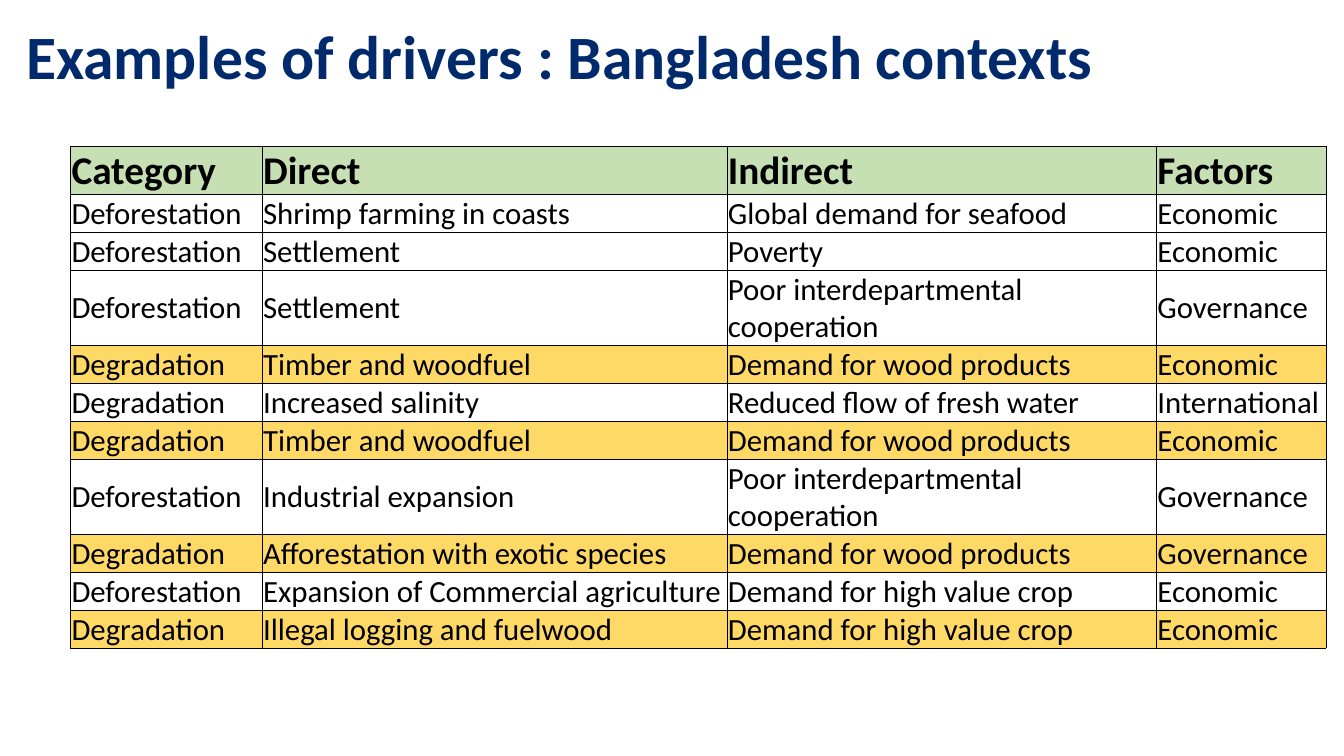
from dataclasses import dataclass

from lxml.etree import SubElement
from pptx import Presentation
from pptx.dml.color import RGBColor
from pptx.enum.text import MSO_ANCHOR
from pptx.oxml.ns import qn
from pptx.util import Inches, Pt


@dataclass(frozen=True)
class Theme:
    font: str = "Calibri"
    navy: str = "002A6C"
    black: str = "000000"
    green: str = "C6E0B4"
    gold: str = "FFD966"
    title: int = 44
    head: int = 28
    body: int = 22
    rule: float = 0.5


THEME = Theme()
TITLE = "Examples of drivers : Bangladesh contexts"
HEADS = ("Category", "Direct", "Indirect", "Factors")
DRIVERS = (
    ("Deforestation", "Shrimp farming in coasts", "Global demand for seafood", "Economic"),
    ("Deforestation", "Settlement", "Poverty", "Economic"),
    ("Deforestation", "Settlement", "Poor interdepartmental cooperation", "Governance"),
    ("Degradation", "Timber and woodfuel", "Demand for wood products", "Economic"),
    ("Degradation", "Increased salinity", "Reduced flow of fresh water", "International"),
    ("Degradation", "Timber and woodfuel", "Demand for wood products", "Economic"),
    ("Deforestation", "Industrial expansion", "Poor interdepartmental cooperation", "Governance"),
    ("Degradation", "Afforestation with exotic species", "Demand for wood products", "Governance"),
    ("Deforestation", "Expansion of Commercial agriculture", "Demand for high value crop", "Economic"),
    ("Degradation", "Illegal logging and fuelwood", "Demand for high value crop", "Economic"),
)
WIDTHS = (1.9, 4.61, 4.26, 1.68)
ROW = 0.22


def style(para, size, color, bold):
    font = para.font
    font.name = THEME.font
    font.size = Pt(size)
    font.bold = bold
    font.color.rgb = RGBColor.from_string(color)


def add_title(slide, left, top, width, height):
    box = slide.shapes.add_textbox(Inches(left), Inches(top), Inches(width), Inches(height))
    frame = box.text_frame
    frame.word_wrap = True
    frame.vertical_anchor = MSO_ANCHOR.MIDDLE
    para = frame.paragraphs[0]
    para.text = TITLE
    para.line_spacing = 0.9
    style(para, THEME.title, THEME.navy, True)


def add_rules(cell):
    props = cell._tc.get_or_add_tcPr()
    for side in ("lnL", "lnR", "lnT", "lnB"):
        line = SubElement(props, qn(f"a:{side}"), w=str(Pt(THEME.rule)))
        fill = SubElement(line, qn("a:solidFill"))
        SubElement(fill, qn("a:srgbClr"), val=THEME.black)


def fill_cell(cell, text, size, bold, color):
    cell.margin_left = cell.margin_right = cell.margin_top = Inches(0.01)
    cell.margin_bottom = 0
    cell.vertical_anchor = MSO_ANCHOR.MIDDLE
    add_rules(cell)
    if color:
        cell.fill.solid()
        cell.fill.fore_color.rgb = RGBColor.from_string(color)
    else:
        cell.fill.background()
    para = cell.text_frame.paragraphs[0]
    para.text = text
    style(para, size, THEME.black, bold)


def row_color(driver):
    local = driver[0] == "Degradation" and driver[-1] != "International"
    return THEME.gold if local else None


def add_drivers(slide, left, top, width, height):
    rows = (HEADS, *DRIVERS)
    shape = slide.shapes.add_table(
        len(rows), len(HEADS), Inches(left), Inches(top), Inches(width), Inches(height)
    )
    table = shape.table
    table.first_row = table.horz_banding = False
    for column, share in zip(table.columns, WIDTHS):
        column.width = Inches(width * share / sum(WIDTHS))
    for index, texts in enumerate(rows):
        table.rows[index].height = Inches(ROW)
        head = index == 0
        size = THEME.head if head else THEME.body
        color = THEME.green if head else row_color(texts)
        for cell, text in zip(table.rows[index].cells, texts):
            fill_cell(cell, text, size, head, color)
    shape.height = Inches(height)


def main():
    deck = Presentation()
    deck.slide_width = Inches(13.33)
    deck.slide_height = Inches(7.5)
    slide = deck.slides.add_slide(deck.slide_layouts[6])
    add_title(slide, 0.16, 0, 12.99, 1.18)
    add_drivers(slide, 0.7, 1.45, 12.45, 4.98)
    deck.save("out.pptx")


if __name__ == "__main__":
    main()
